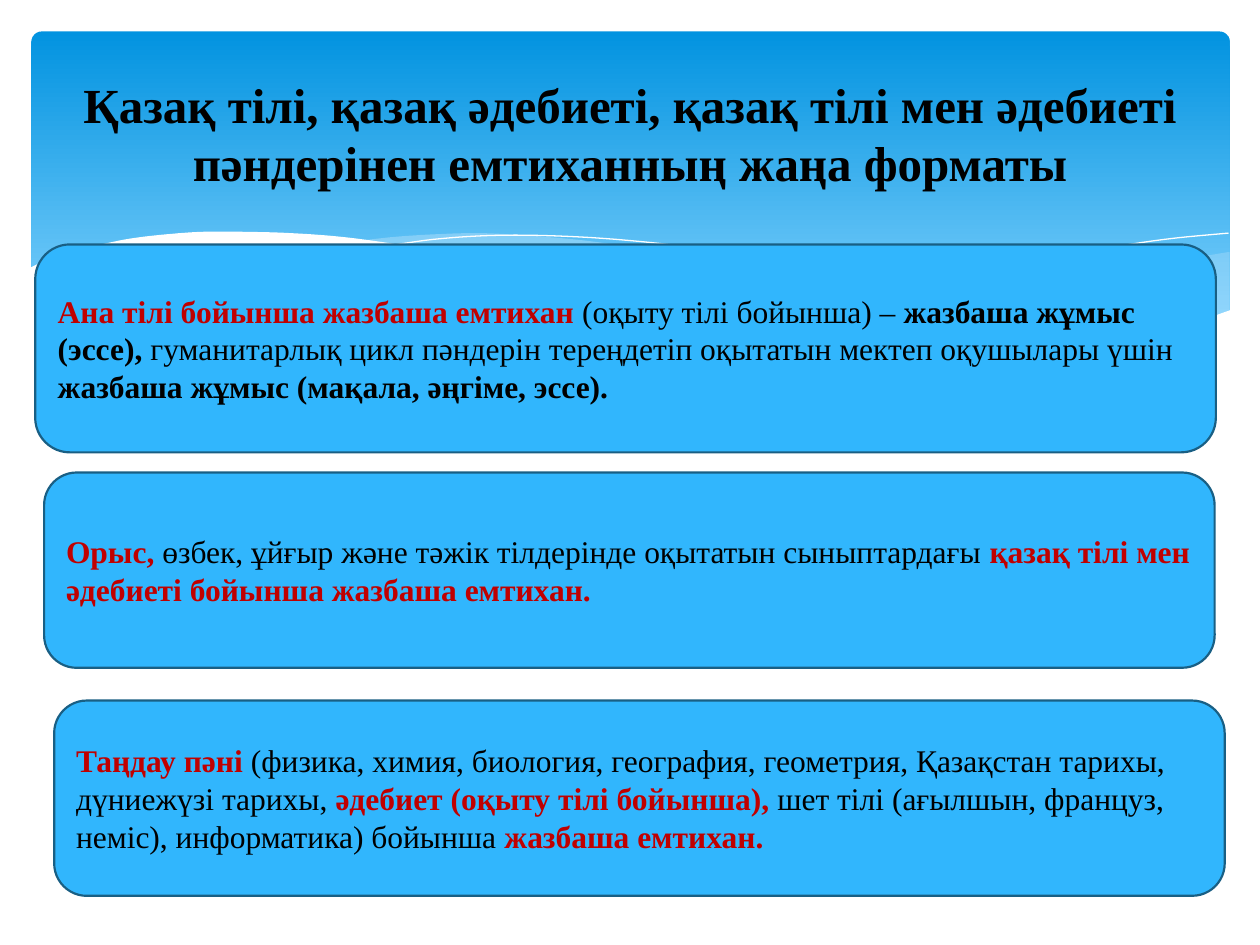
from pptx import Presentation
from pptx import util as u
from pptx.dml.color import RGBColor
from pptx.enum import shapes, text
from pptx.oxml import ns, xmlchemy

PX = 9144  # 100 px to the inch
STEPS = 6
FONT = "Times New Roman"

SKY = RGBColor(0x02, 0x93, 0xE0)
PALE = RGBColor(0x83, 0xD3, 0xFE)
MIST = RGBColor(0xC6, 0xE7, 0xFC)
WHITE = RGBColor(0xFF, 0xFF, 0xFF)
BLUE = RGBColor(0x31, 0xB6, 0xFD)
EDGE = RGBColor(0x19, 0x5F, 0x84)
BLACK = RGBColor(0, 0, 0)
RED = RGBColor(0xC0, 0, 0)

TITLE = "Қазақ тілі, қазақ әдебиеті, қазақ тілі мен әдебиеті пәндерінен емтиханның жаңа форматы"

# Each card: box, then runs of (text, colour, bold)
CARDS = [
    ((28, 194, 937, 165), [
        ("Ана тілі бойынша жазбаша емтихан ", RED, True),
        ("(оқыту тілі бойынша) – ", BLACK, False),
        ("жазбаша жұмыс (эссе), ", BLACK, True),
        ("гуманитарлық цикл пәндерін тереңдетіп оқытатын мектеп оқушылары үшін ", BLACK, False),
        ("жазбаша жұмыс (мақала, әңгіме, эссе).", BLACK, True),
    ]),
    ((35, 375, 929, 155), [
        ("Орыс,", RED, True),
        (" өзбек, ұйғыр және тәжік тілдерінде оқытатын сыныптардағы ", BLACK, False),
        ("қазақ тілі мен әдебиеті бойынша жазбаша емтихан.", RED, True),
    ]),
    ((43, 556, 929, 155), [
        ("Таңдау пәні ", RED, True),
        ("(физика, химия, биология, география, геометрия, Қазақстан тарихы, "
         "дүниежүзі тарихы, ", BLACK, False),
        ("әдебиет (оқыту тілі бойынша), ", RED, True),
        ("шет тілі (ағылшын, француз, неміс), информатика) бойынша ", BLACK, False),
        ("жазбаша емтихан.", RED, True),
    ]),
]

# Waves: smooth curves, joined end to end to close an area
RIGHT = [
    [(975, 200), (935, 207), (891, 216), (861, 223), (805, 237), (753, 248), (706, 257), (661, 265)],
    [(661, 265), (705, 271), (757, 276), (803, 278), (854, 276), (897, 270), (935, 262), (976, 247)],
    [(976, 247), (976, 200)],
]
MIDDLE = [
    [(893, 273), (837, 265), (775, 254), (706, 240), (629, 222), (569, 208), (514, 198),
     (465, 191), (420, 187), (380, 185), (344, 186), (313, 188), (286, 191)],
    [(286, 191), (342, 199), (404, 211), (449, 222), (530, 240), (601, 255), (665, 266),
     (722, 274), (773, 277), (818, 278), (857, 277), (893, 273)],
]
CREST = [[(309, 195), (344, 190), (387, 187), (433, 187), (489, 190), (556, 197), (636, 208),
          (727, 226), (831, 251), (907, 272)]]
RISE = [[(613, 257), (672, 241), (748, 223), (806, 210), (866, 199), (924, 190), (975, 185)]]
FRONT = [
    [(977, 246), (930, 262), (887, 271), (837, 276), (793, 276), (744, 274), (688, 268),
     (626, 258), (555, 245), (475, 227), (418, 213), (365, 202), (316, 194), (271, 188),
     (230, 185), (193, 184), (161, 184), (132, 186), (106, 189), (85, 193), (59, 199),
     (40, 205), (23, 213)],
    [(23, 213), (23, 329), (23, 329)],
    [(23, 329), (977, 329)],
]


def smooth(knots):
    """Points of a Catmull-Rom curve through the knots, in EMU."""
    ring = [knots[0], *knots, knots[-1]]
    curve = [(x * PX, y * PX) for x, y in knots[:1]]
    for a, b, c, d in zip(ring, ring[1:], ring[2:], ring[3:]):
        for step in range(1, STEPS + 1):
            t = step / STEPS
            curve.append(tuple(
                round(PX / 2 * (2 * q + (r - p) * t + (2 * p - 5 * q + 4 * r - s) * t ** 2
                                + (3 * q - p - 3 * r + s) * t ** 3))
                for p, q, r, s in zip(a, b, c, d)))
    return curve


def trace(slide, curves, closed):
    points = [point for knots in curves for point in smooth(knots)]
    pen = slide.shapes.build_freeform(*points[0], scale=1.0)
    pen.add_line_segments(points[1:], close=closed)
    wave = pen.convert_to_shape()
    wave.shadow.inherit = False
    return wave


def add_wave(slide, curves, color, alpha=100):
    wave = trace(slide, curves, True)
    wave.line.fill.background()
    wave.fill.solid()
    wave.fill.fore_color.rgb = color
    if alpha < 100:
        tint = wave.fill._xPr.find(".//" + ns.qn("a:srgbClr"))
        tint.append(xmlchemy.OxmlElement("a:alpha"))
        tint[-1].set("val", str(alpha * 1000))


def add_curl(slide, curves):
    """Draw an open white hairline."""
    curl = trace(slide, curves, False)
    curl.fill.background()
    curl.line.color.rgb = WHITE
    curl.line.width = u.Pt(0)


def add_round(slide, box):
    shape = slide.shapes.add_shape(
        shapes.MSO_SHAPE.ROUNDED_RECTANGLE, *(n * PX for n in box))
    shape.shadow.inherit = False
    return shape


def add_sky(slide):
    sky = add_round(slide, (25, 25, 951, 270))
    sky.adjustments[0] = 0.03
    sky.line.fill.background()
    sky.fill.gradient()
    sky.fill.gradient_angle = 270
    for stop, color, place in zip(sky.fill.gradient_stops, (SKY, PALE), (0, 0.9)):
        stop.color.rgb = color
        stop.position = place


def write(shape, runs, size, align):
    frame = shape.text_frame
    frame.word_wrap = True
    frame.vertical_anchor = text.MSO_ANCHOR.MIDDLE
    para = frame.paragraphs[0]
    para.alignment = align
    for words, color, bold in runs:
        run = para.add_run()
        run.text = words
        run.font.name = FONT
        run.font.size = u.Pt(size)
        run.font.bold = bold
        run.font.color.rgb = color


def add_title(slide):
    box = slide.shapes.add_textbox(*(n * PX for n in (50, 37, 900, 137)))
    write(box, [(TITLE, BLACK, True)], 28, text.PP_ALIGN.CENTER)


def add_card(slide, box, runs):
    card = add_round(slide, box)
    card.fill.solid()
    card.fill.fore_color.rgb = BLUE
    card.line.color.rgb = EDGE
    card.line.width = u.Pt(1.25)
    write(card, runs, 18, text.PP_ALIGN.LEFT)


def main():
    deck = Presentation()
    deck.slide_width, deck.slide_height = 1000 * PX, 750 * PX
    slide = deck.slides.add_slide(deck.slide_layouts[6])
    add_sky(slide)
    add_wave(slide, RIGHT, MIST, 29)
    add_wave(slide, MIDDLE, MIST, 40)
    add_curl(slide, CREST)
    add_curl(slide, RISE)
    add_wave(slide, FRONT, WHITE)
    add_title(slide)
    for box, runs in CARDS:
        add_card(slide, box, runs)
    deck.save("out.pptx")


if __name__ == "__main__":
    main()
